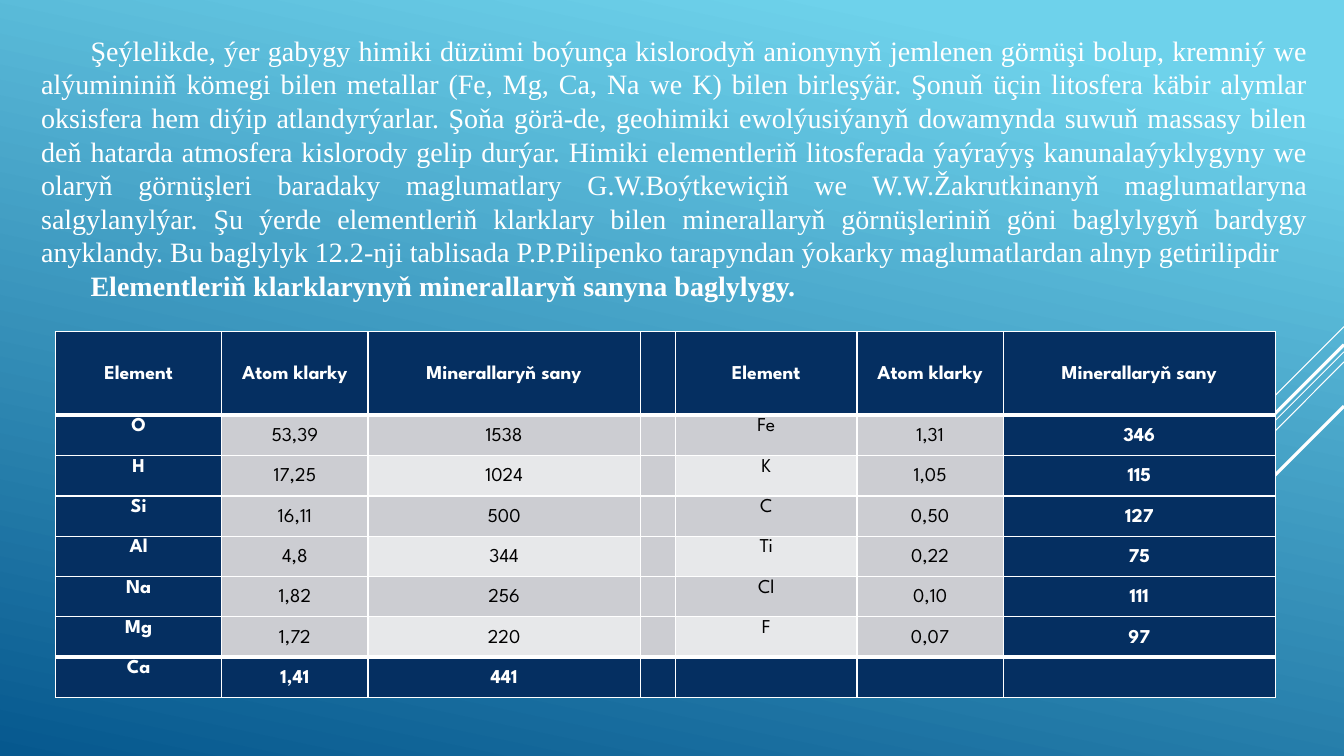
from lxml import etree
from pptx import Presentation
from pptx.dml.color import RGBColor
from pptx.enum.shapes import MSO_CONNECTOR
from pptx.enum.text import MSO_ANCHOR, PP_ALIGN
from pptx.oxml.ns import qn
from pptx.util import Inches, Pt

STRAIGHT = MSO_CONNECTOR.STRAIGHT
TOP, MIDDLE = MSO_ANCHOR.TOP, MSO_ANCHOR.MIDDLE
CENTER, JUSTIFY = PP_ALIGN.CENTER, PP_ALIGN.JUSTIFY

COLORS = {
    "sky": "6ED2EB",
    "deep": "06588E",
    "navy": "052F61",
    "band": "CCCDD2",
    "pale": "E7E8EA",
    "white": "FFFFFF",
    "black": "000000",
}
BODY_FONT, TABLE_FONT = "Times New Roman", "League Spartan"

RAYS = [
    (3.24, 12.33, 4.24, 0.75),
    (3.49, 10.07, 6.75, 0.75),
    (3.59, 11.26, 5.67, 0.75),
    (3.42, 11.42, 5.33, 2.25),
    (4.03, 11.94, 5.42, 2.25),
]
INTRO = (
    "Şeýlelikde, ýer gabygy himiki düzümi boýunça kislorodyň anionynyň jemlenen görnüşi bolup, "
    "kremniý we alýumininiň kömegi bilen metallar (Fe, Mg, Ca, Na we K) bilen birleşýär. "
    "Şonuň üçin litosfera käbir alymlar oksisfera hem diýip atlandyrýarlar. "
    "Şoňa görä-de, geohimiki ewolýusiýanyň dowamynda suwuň massasy bilen deň hatarda atmosfera "
    "kislorody gelip durýar. Himiki elementleriň litosferada ýaýraýyş kanunalaýyklygyny we "
    "olaryň görnüşleri baradaky maglumatlary G.W.Boýtkewiçiň we W.W.Žakrutkinanyň "
    "maglumatlaryna salgylanylýar. Şu ýerde elementleriň klarklary bilen minerallaryň "
    "görnüşleriniň göni baglylygyň bardygy anyklandy. Bu baglylyk 12.2-nji tablisada "
    "P.P.Pilipenko tarapyndan ýokarky maglumatlardan alnyp getirilipdir"
)
TABLE_TITLE = "Elementleriň klarklarynyň minerallaryň sanyna baglylygy."
HEADINGS = ["Element", "Atom klarky", "Minerallaryň sany"]
ROWS = [
    HEADINGS + [""] + HEADINGS,
    ["O", "53,39", "1538", "", "Fe", "1,31", "346"],
    ["H", "17,25", "1024", "", "K", "1,05", "115"],
    ["Si", "16,11", "500", "", "C", "0,50", "127"],
    ["Al", "4,8", "344", "", "Ti", "0,22", "75"],
    ["Na", "1,82", "256", "", "Cl", "0,10", "111"],
    ["Mg", "1,72", "220", "", "F", "0,07", "97"],
    ["Ca", "1,41", "441", "", "", "", ""],
]
COL_WIDTHS = [1.65, 1.45, 2.7, 0.35, 1.8, 1.45, 2.7]
ROW_HEIGHTS = [0.83] + [0.4] * 7


class SlideBuilder:
    """Draws the elements of one slide in a shared style."""

    def __init__(self, prs):
        self.s = prs.slides.add_slide(prs.slide_layouts[6])

    def color(self, name):
        return RGBColor.from_string(COLORS[name])

    def background(self):
        fill = self.s.background.fill
        fill.gradient()
        fill.gradient_angle = 258
        stops = zip(fill.gradient_stops, (("sky", 0.1), ("deep", 1.0)))
        for stop, (name, position) in stops:
            stop.color.rgb = self.color(name)
            stop.position = position

    def line(self, x1, y1, x2, y2, width):
        c = self.s.shapes.add_connector(
            STRAIGHT, Inches(x1), Inches(y1), Inches(x2), Inches(y2))
        c.line.color.rgb = self.color("white")
        c.line.width = Pt(width)
        etree.SubElement(c._element.spPr, qn("a:effectLst"))

    def style_runs(self, p, font, size, color, bold):
        for r in p.runs:
            r.font.name = font
            r.font.size = Pt(size)
            r.font.bold = bold
            r.font.color.rgb = self.color(color)

    def text(self, x, y, w, h, paragraphs):
        sp = self.s.shapes.add_textbox(Inches(x), Inches(y), Inches(w), Inches(h))
        tf = sp.text_frame
        tf.word_wrap = True
        tf.vertical_anchor = TOP
        tf.margin_top = Inches(0.07)
        for i, (text, bold) in enumerate(paragraphs):
            p = tf.add_paragraph() if i else tf.paragraphs[0]
            p.text = text
            p.alignment = JUSTIFY
            p.line_spacing = Pt(24)
            p._p.get_or_add_pPr().set("indent", str(Inches(0.49)))
            self.style_runs(p, BODY_FONT, 20, "white", bold)

    def border(self, cell, side, width):
        ln = etree.SubElement(cell._tc.get_or_add_tcPr(), qn("a:" + side), w=str(Pt(width)))
        fill = etree.SubElement(ln, qn("a:solidFill"))
        etree.SubElement(fill, qn("a:srgbClr"), val=COLORS["white"])

    def cell(self, cell, text, row, col):
        last_row, last_col = len(ROWS) - 1, len(COL_WIDTHS) - 1
        strong = row in (0, last_row) or col in (0, last_col)
        self.border(cell, "lnL", 1)
        self.border(cell, "lnR", 1)
        self.border(cell, "lnT", 3 if row in (1, last_row) else 1)
        self.border(cell, "lnB", 3 if row in (0, last_row - 1) else 1)
        pale = row % 2 == 0 and col in (2, 4)
        cell.fill.solid()
        cell.fill.fore_color.rgb = self.color(
            "navy" if strong else "pale" if pale else "band")
        cell.margin_left = cell.margin_right = Inches(0.07)
        cell.margin_top = cell.margin_bottom = 0
        cell.vertical_anchor = TOP if row and col in (0, 4) else MIDDLE
        p = cell.text_frame.paragraphs[0]
        p.text = text
        p.alignment = CENTER
        p.line_spacing = 1.15
        p.font.size = Pt(14)
        self.style_runs(p, TABLE_FONT, 14, "white" if strong else "black", strong)

    def table(self, x, y):
        shape = self.s.shapes.add_table(
            len(ROWS), len(COL_WIDTHS), Inches(x), Inches(y),
            Inches(sum(COL_WIDTHS)), Inches(sum(ROW_HEIGHTS)))
        table = shape.table
        for column, width in zip(table.columns, COL_WIDTHS):
            column.width = Inches(width)
        for i, (height, values) in enumerate(zip(ROW_HEIGHTS, ROWS)):
            table.rows[i].height = Inches(height)
            for j, value in enumerate(values):
                self.cell(table.cell(i, j), value, i, j)


def main():
    prs = Presentation()
    prs.slide_width, prs.slide_height = Inches(13.33), Inches(7.5)
    slide = SlideBuilder(prs)
    slide.background()
    for y1, x2, y2, width in RAYS:
        slide.line(13.33, y1, x2, y2, width)
    slide.table(0.55, 3.29)
    slide.text(0.31, 0.26, 12.76, 3.03, [(INTRO, False), (TABLE_TITLE, True)])
    prs.save("out.pptx")


if __name__ == "__main__":
    main()
